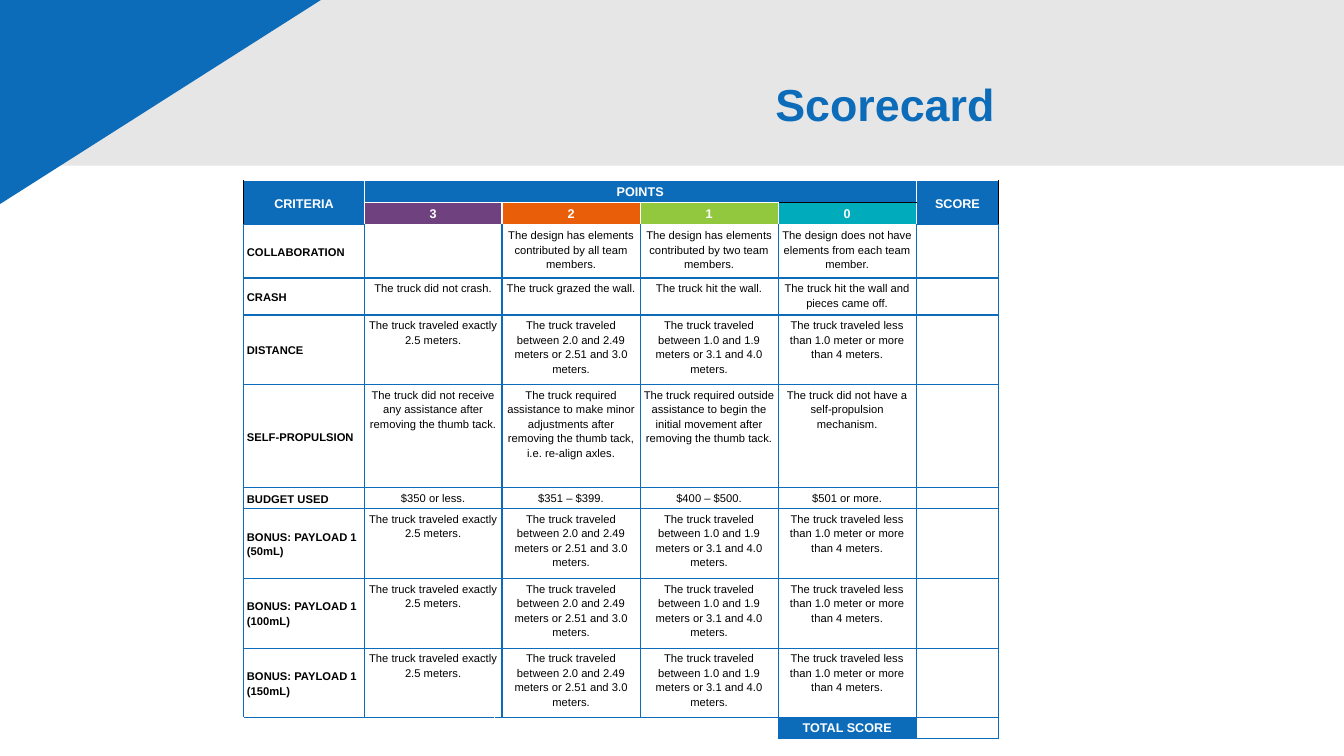
from lxml import etree
from pptx import Presentation
from pptx.dml.color import RGBColor
from pptx.enum import shapes, text
from pptx.oxml.ns import qn
from pptx.util import Pt

COLORS = {
    "blue": "0D6CB9", "gray": "E7E6E6", "white": "FFFFFF", "black": "000000",
    "purple": "70417F", "orange": "E95E09", "green": "92C83E", "teal": "00ACBB",
}
FONT = "Arial"
COL_WIDTHS = [86, 93, 5.5, 98.6, 98.6, 98.6, 59]
ROW_HEIGHTS = [15.8, 15.8, 38, 26.5, 49.8, 73.5, 15.1, 49.8, 49.8, 49.8, 15.1]
LEVEL_COLS = [1, 3, 4, 5]  # the 3-point level spans columns 1 and 2
LEVELS = [("3", "purple"), ("2", "orange"), ("1", "green"), ("0", "teal")]
DISTANCES = [
    "The truck traveled exactly 2.5 meters.",
    "The truck traveled between 2.0 and 2.49 meters or 2.51 and 3.0 meters.",
    "The truck traveled between 1.0 and 1.9 meters or 3.1 and 4.0 meters.",
    "The truck traveled less than 1.0 meter or more than 4 meters.",
]
CRITERIA = [
    ("COLLABORATION", [
        "",
        "The design has elements contributed by all team members.",
        "The design has elements contributed by two team members.",
        "The design does not have elements from each team member."]),
    ("CRASH", [
        "The truck did not crash.",
        "The truck grazed the wall.",
        "The truck hit the wall.",
        "The truck hit the wall and pieces came off."]),
    ("DISTANCE", DISTANCES),
    ("SELF-PROPULSION", [
        "The truck did not receive any assistance after removing the thumb tack.",
        "The truck required assistance to make minor adjustments after "
        "removing the thumb tack, i.e. re-align axles.",
        "The truck required outside assistance to begin the initial movement "
        "after removing the thumb tack.",
        "The truck did not have a self-propulsion mechanism."]),
    ("BUDGET USED", [
        "$350 or less.", "$351 – $399.", "$400 – $500.", "$501 or more."]),
] + [(f"BONUS: PAYLOAD 1 ({ml}mL)", DISTANCES) for ml in (50, 100, 150)]


def rgb(name):
    return RGBColor.from_string(COLORS[name])


def format_run(r, size, color, bold):
    r.font.name, r.font.size, r.font.bold = FONT, Pt(size), bold
    r.font.color.rgb = rgb(color)


def add_block(s, kind, x, y, w, h, color):
    sp = s.shapes.add_shape(kind, Pt(x), Pt(y), Pt(w), Pt(h))
    sp.shadow.inherit = False
    sp.fill.solid()
    sp.fill.fore_color.rgb = rgb(color)
    sp.line.fill.background()
    return sp


def draw_banner(s, x, y, w, h):
    # Gray band and blue corner
    add_block(s, shapes.MSO_SHAPE.RECTANGLE, x, y, w, h, "gray")
    corner = add_block(s, shapes.MSO_SHAPE.RIGHT_TRIANGLE, x, y, 229.3, 145.8, "blue")
    corner._element.spPr.find(qn("a:xfrm")).set("flipV", "1")

    # Title, brought in front of the band
    title = s.shapes.title
    title.left, title.top = Pt(x + 19.4), Pt(y + 24.5)
    title.width, title.height = Pt(698.4), Pt(104.4)
    tf = title.text_frame
    tf.text = "Scorecard"
    tf.vertical_anchor = text.MSO_ANCHOR.MIDDLE
    p = tf.paragraphs[0]
    p.alignment, p.line_spacing = text.PP_ALIGN.RIGHT, 0.9
    format_run(p.runs[0], 32, "blue", True)
    s.shapes._spTree.append(title._element)


def set_borders(cell, left, right, top, bottom):
    tcPr = cell._tc.get_or_add_tcPr()
    for i, (side, color) in enumerate(zip("LRTB", (left, right, top, bottom))):
        ln = etree.Element(qn(f"a:ln{side}"), w=str(Pt(1)))
        fill = etree.SubElement(ln, qn("a:solidFill"))
        etree.SubElement(fill, qn("a:srgbClr"), val=COLORS[color])
        tcPr.insert(i, ln)


def blank_cell(cell):
    cell.margin_left = cell.margin_right = Pt(2.2)
    cell.margin_top = cell.margin_bottom = Pt(1.9)
    cell.fill.background()
    p = cell.text_frame.paragraphs[0]
    etree.SubElement(p._p, qn("a:endParaRPr"), sz="800")


def write_cell(cell, words, size=8, color="black", bold=False, fill=None,
               centered=True, middle=False, spacing=1.15):
    if fill:
        cell.fill.solid()
        cell.fill.fore_color.rgb = rgb(fill)
    if middle:
        cell.vertical_anchor = text.MSO_ANCHOR.MIDDLE
    p = cell.text_frame.paragraphs[0]
    p.text = words
    p.alignment = text.PP_ALIGN.CENTER if centered else text.PP_ALIGN.LEFT
    p.line_spacing = spacing
    for r in p.runs:
        format_run(r, size, color, bold)


def border_colors(row, col):
    """Left, right, top and bottom line colours of a cell."""
    if row < 2:
        return ("black" if col == 0 else "white",
                "black" if col == 6 else "white",
                "black" if (row, col) == (1, 5) else "white",
                "blue" if col in (0, 6) else
                "black" if (row, col) == (0, 5) else "white")
    if row == len(ROW_HEIGHTS) - 1 and col < 5:
        return "white", "blue" if col == 4 else "white", "blue", "white"
    return "blue", "blue", "white" if row == 2 and 0 < col < 6 else "blue", "blue"


def draw_scorecard(s, x, y):
    n_rows, n_cols = len(ROW_HEIGHTS), len(COL_WIDTHS)
    table = s.shapes.add_table(n_rows, n_cols, Pt(x), Pt(y),
                               Pt(sum(COL_WIDTHS)), Pt(sum(ROW_HEIGHTS))).table
    table.first_row = table.horz_banding = False
    for column, width in zip(table.columns, COL_WIDTHS):
        column.width = Pt(width)
    for row, height in zip(table.rows, ROW_HEIGHTS):
        row.height = Pt(height)
    for cell in table.iter_cells():
        blank_cell(cell)

    # Header
    head = dict(size=9, color="white", bold=True)
    write_cell(table.cell(0, 0), "CRITERIA", fill="blue", middle=True, **head)
    write_cell(table.cell(0, 1), "POINTS", fill="blue", **head)
    write_cell(table.cell(0, 6), "SCORE", fill="blue", middle=True, **head)
    for col, (points, color) in zip(LEVEL_COLS, LEVELS):
        write_cell(table.cell(1, col), points, fill=color, **head)

    # Criteria
    for row, (name, levels) in enumerate(CRITERIA, start=2):
        write_cell(table.cell(row, 0), name, bold=True, centered=False, middle=True)
        for col, words in zip(LEVEL_COLS, levels):
            if words:
                write_cell(table.cell(row, col), words)

    # Total
    last = n_rows - 1
    write_cell(table.cell(last, 5), "TOTAL SCORE", fill="blue", middle=True,
               spacing=1.0, **head)

    # Lines and merged cells
    for row in range(n_rows):
        for col in range(n_cols):
            set_borders(table.cell(row, col), *border_colors(row, col))
    spans = [(0, 0, 1, 0), (0, 1, 0, 5), (0, 6, 1, 6),
             (last, 0, last, 1), (last, 2, last, 4)]
    spans += [(row, 1, row, 2) for row in range(1, last)]
    for top, left, bottom, right in spans:
        table.cell(top, left).merge(table.cell(bottom, right))


def main():
    prs = Presentation()
    prs.slide_width, prs.slide_height = Pt(960), Pt(540)
    s = prs.slides.add_slide(prs.slide_layouts[5])
    draw_banner(s, 0, 0, 960, 118.4)
    draw_scorecard(s, 174.2, 129)
    prs.save("out.pptx")


if __name__ == "__main__":
    main()
